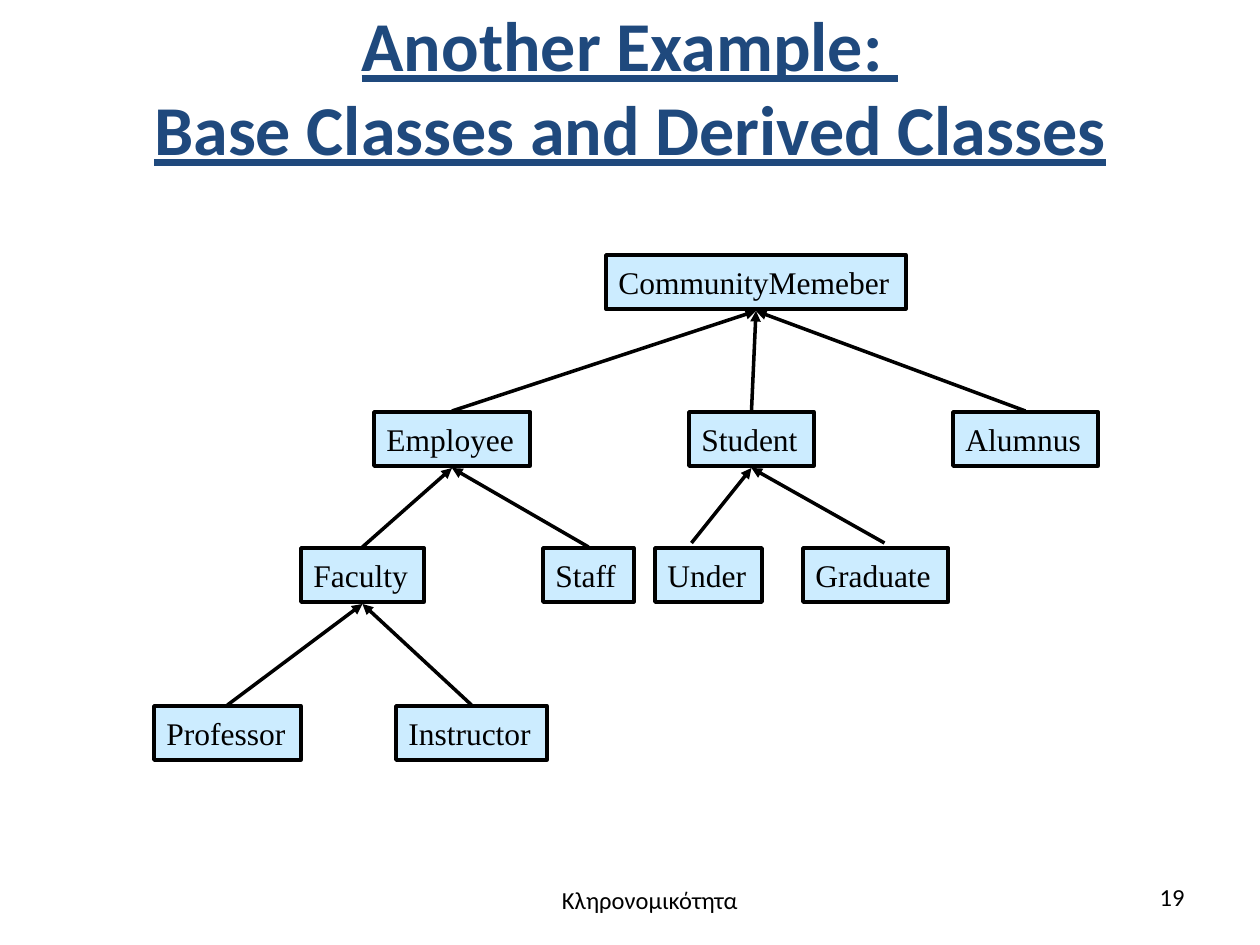
from lxml.etree import SubElement
from pptx import Presentation
from pptx.dml.color import RGBColor
from pptx.enum.shapes import MSO_CONNECTOR, MSO_SHAPE
from pptx.enum.text import MSO_ANCHOR, PP_ALIGN
from pptx.oxml.ns import qn
from pptx.util import Pt

EMU_PER_PX = 914400 / 126
COLORS = {"title": "1F497D", "box": "CCECFF", "ink": "000000"}
BOX_HEIGHT = 54
LINE_WIDTH = Pt(2)

# class name: (left, top, width)
CLASSES = {
    "CommunityMemeber": (606, 255, 300),
    "Employee": (374, 412, 156),
    "Student": (689, 412, 125),
    "Alumnus": (953, 412, 145),
    "Faculty": (301, 548, 123),
    "Staff": (543, 548, 91),
    "Under": (655, 548, 107),
    "Graduate": (803, 548, 145),
    "Professor": (154, 706, 147),
    "Instructor": (396, 706, 151),
}

# derived class, base class, shift of the arrow's foot from the top centre
INHERITANCE = [
    ("Employee", "CommunityMemeber", (0, -1)),
    ("Student", "CommunityMemeber", (0, -1)),
    ("Alumnus", "CommunityMemeber", (0, -1)),
    ("Faculty", "Employee", (0, -1)),
    ("Staff", "Employee", (0, -1)),
    ("Professor", "Faculty", (0, -1)),
    ("Instructor", "Faculty", (0, -1)),
    ("Under", "Student", (-17, -5)),
    ("Graduate", "Student", (9, -5)),
]


def px(*lengths):
    return [round(length * EMU_PER_PX) for length in lengths]


def color(name):
    return RGBColor.from_string(COLORS[name])


def place(shape, left, top, width, height):
    shape.left, shape.top, shape.width, shape.height = px(left, top, width, height)


def add_run(paragraph, text, size, font_name, color_name="ink"):
    run = paragraph.add_run()
    run.text = text
    run.font.size = Pt(size)
    run.font.name = font_name
    run.font.color.rgb = color(color_name)
    return run


def format_title(title, lines):
    place(title, 63, -4, 1134, 179)
    title.text_frame.vertical_anchor = MSO_ANCHOR.MIDDLE
    paragraph = title.text_frame.paragraphs[0]
    paragraph.alignment = PP_ALIGN.CENTER
    for index, line in enumerate(lines):
        if index:
            paragraph.add_line_break()
        run = add_run(paragraph, line, 40, "Calibri", "title")
        run.font.bold = True
        run.font.underline = True


def add_class_box(slide, name, left, top, width):
    box = slide.shapes.add_shape(MSO_SHAPE.RECTANGLE, *px(left, top, width, BOX_HEIGHT))
    box.shadow.inherit = False
    box.fill.solid()
    box.fill.fore_color.rgb = color("box")
    box.line.color.rgb = color("ink")
    box.line.width = LINE_WIDTH
    box.text_frame.word_wrap = False
    box.text_frame.vertical_anchor = MSO_ANCHOR.MIDDLE
    paragraph = box.text_frame.paragraphs[0]
    paragraph.alignment = PP_ALIGN.LEFT
    add_run(paragraph, name, 18, "Times New Roman")


def add_inheritance_arrow(slide, derived, base, foot_shift):
    """Point from the top of the derived class to the bottom of its base."""
    left, top, width = CLASSES[derived]
    base_left, base_top, base_width = CLASSES[base]
    shift_x, shift_y = foot_shift
    foot = px(left + width / 2 + shift_x, top + shift_y)
    tip = px(base_left + base_width / 2, base_top + BOX_HEIGHT + 2)
    arrow = slide.shapes.add_connector(MSO_CONNECTOR.STRAIGHT, *foot, *tip)
    arrow.line.color.rgb = color("ink")
    arrow.line.width = LINE_WIDTH
    SubElement(arrow.line._get_or_add_ln(), qn("a:tailEnd"), type="triangle")
    SubElement(arrow._element.spPr, qn("a:effectLst"))


def add_footer_text(slide, text, bounds, alignment):
    text_box = slide.shapes.add_textbox(*px(*bounds))
    text_box.text_frame.word_wrap = True
    paragraph = text_box.text_frame.paragraphs[0]
    paragraph.alignment = alignment
    add_run(paragraph, text, 14, "Calibri")


def main():
    presentation = Presentation()
    presentation.slide_width, presentation.slide_height = px(1260, 945)
    slide = presentation.slides.add_slide(presentation.slide_layouts[5])
    format_title(slide.shapes.title, ["Another Example: ", "Base Classes and Derived Classes"])
    for name, bounds in CLASSES.items():
        add_class_box(slide, name, *bounds)
    for link in INHERITANCE:
        add_inheritance_arrow(slide, *link)
    add_footer_text(slide, "Κληρονομικότητα", (430, 879, 440, 69), PP_ALIGN.CENTER)
    add_footer_text(slide, "19", (903, 876, 294, 50), PP_ALIGN.RIGHT)
    presentation.save("out.pptx")


if __name__ == "__main__":
    main()
